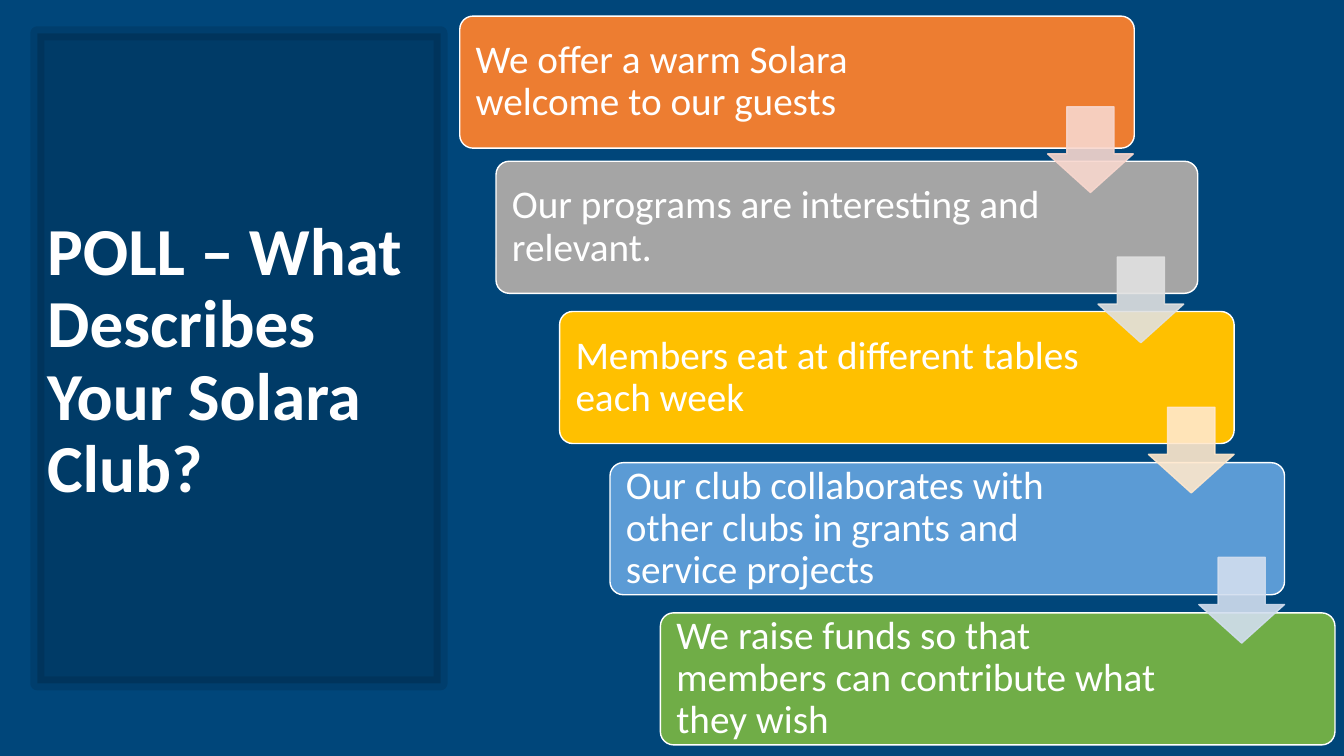
import pptx
import pptx.util
import pptx.dml.color
import pptx.enum.shapes
import pptx.enum.text
import pptx.oxml
import pptx.oxml.ns

Inches = pptx.util.Inches
Pt = pptx.util.Pt
RGB = pptx.dml.color.RGBColor
KIND = pptx.enum.shapes.MSO_SHAPE

NAVY = RGB(0x00, 0x46, 0x7A)
BLACK = RGB(0x00, 0x00, 0x00)
WHITE = RGB(0xFF, 0xFF, 0xFF)
ORANGE = RGB(0xED, 0x7D, 0x31)
GRAY = RGB(0xA5, 0xA5, 0xA5)
GOLD = RGB(0xFF, 0xC0, 0x00)
BLUE = RGB(0x5B, 0x9B, 0xD5)
GREEN = RGB(0x70, 0xAD, 0x47)
PEACH = RGB(0xF8, 0xD7, 0xCE)
SILVER = RGB(0xE1, 0xE1, 0xE1)
CREAM = RGB(0xFF, 0xE8, 0xCC)
ICE = RGB(0xD2, 0xDE, 0xEF)

STEPS = [
    ("We offer a warm Solara welcome to our guests", ORANGE, 0, 0, 6.69),
    ("Our programs are interesting and relevant.", GRAY, 0.36, 1.44, 6.96),
    ("Members eat at different tables each week", GOLD, 0.99, 2.93, 6.69),
    ("Our club collaborates with other clubs in grants and service projects",
     BLUE, 1.49, 4.43, 6.69),
    ("We raise funds so that members can contribute what they wish",
     GREEN, 1.99, 5.92, 6.69),
]
ARROWS = [PEACH, SILVER, CREAM, ICE]


def fade(fill, percent):
    color = fill._xPr.find(".//" + pptx.oxml.ns.qn("a:srgbClr"))
    alpha = pptx.oxml.parse_xml(
        "<a:alpha %s val='%d'/>" % (pptx.oxml.ns.nsdecls("a"), percent * 1000))
    color.append(alpha)


def block(slide, kind, box, color, edge, width):
    shape = slide.shapes.add_shape(kind, *map(Inches, box))
    shape.shadow.inherit = False
    shape.fill.solid()
    shape.fill.fore_color.rgb = color
    shape.line.color.rgb = edge
    shape.line.width = Pt(width)
    return shape


def write(shape, text, size, bold, insets):
    frame = shape.text_frame
    frame.word_wrap = True
    frame.vertical_anchor = pptx.enum.text.MSO_ANCHOR.MIDDLE
    frame.margin_left, frame.margin_right = map(Inches, insets)
    frame.margin_top = frame.margin_bottom = 0
    frame.text = text
    line = frame.paragraphs[0]
    line.alignment = pptx.enum.text.PP_ALIGN.LEFT
    line.line_spacing = 0.9
    font = line.runs[0].font
    font.name = "Calibri"
    font.size = Pt(size)
    font.bold = bold
    font.color.rgb = WHITE


def title(slide, left, top, width, height):
    panel = block(slide, KIND.RECTANGLE, (left, top, width, height), BLACK, BLACK, 10)
    fade(panel.fill, 15)
    fade(panel.line.fill, 10)
    head = slide.shapes.add_textbox(
        *map(Inches, (left, top + 0.08, width, height - 0.08)))
    write(head, "POLL – What Describes Your Solara Club?", 48, True, (0.1, 0.1))


def stairs(slide, left, top):
    for text, color, right, down, width in STEPS:
        box = (left + right, top + down, width, 1.31)
        step = block(slide, KIND.ROUNDED_RECTANGLE, box, color, WHITE, 1)
        step.adjustments[0] = 0.1
        write(step, text, 28, False, (0.12, 1.46))
    for index, color in enumerate(ARROWS):
        box = (left + 5.83 + 0.5 * index, top + 0.9 + 1.49 * index, 0.85, 0.85)
        arrow = block(slide, KIND.DOWN_ARROW, box, color, color, 1)
        arrow.adjustments[0] = 0.55
        arrow.adjustments[1] = 0.45
        fade(arrow.fill, 90)
        fade(arrow.line.fill, 90)


def main():
    deck = pptx.Presentation()
    deck.slide_width = Inches(13.33)
    deck.slide_height = Inches(7.5)
    slide = deck.slides.add_slide(deck.slide_layouts[6])
    slide.background.fill.solid()
    slide.background.fill.fore_color.rgb = NAVY
    title(slide, 0.37, 0.33, 4, 6.45)
    stairs(slide, 4.56, 0.16)
    deck.save("out.pptx")


if __name__ == "__main__":
    main()
